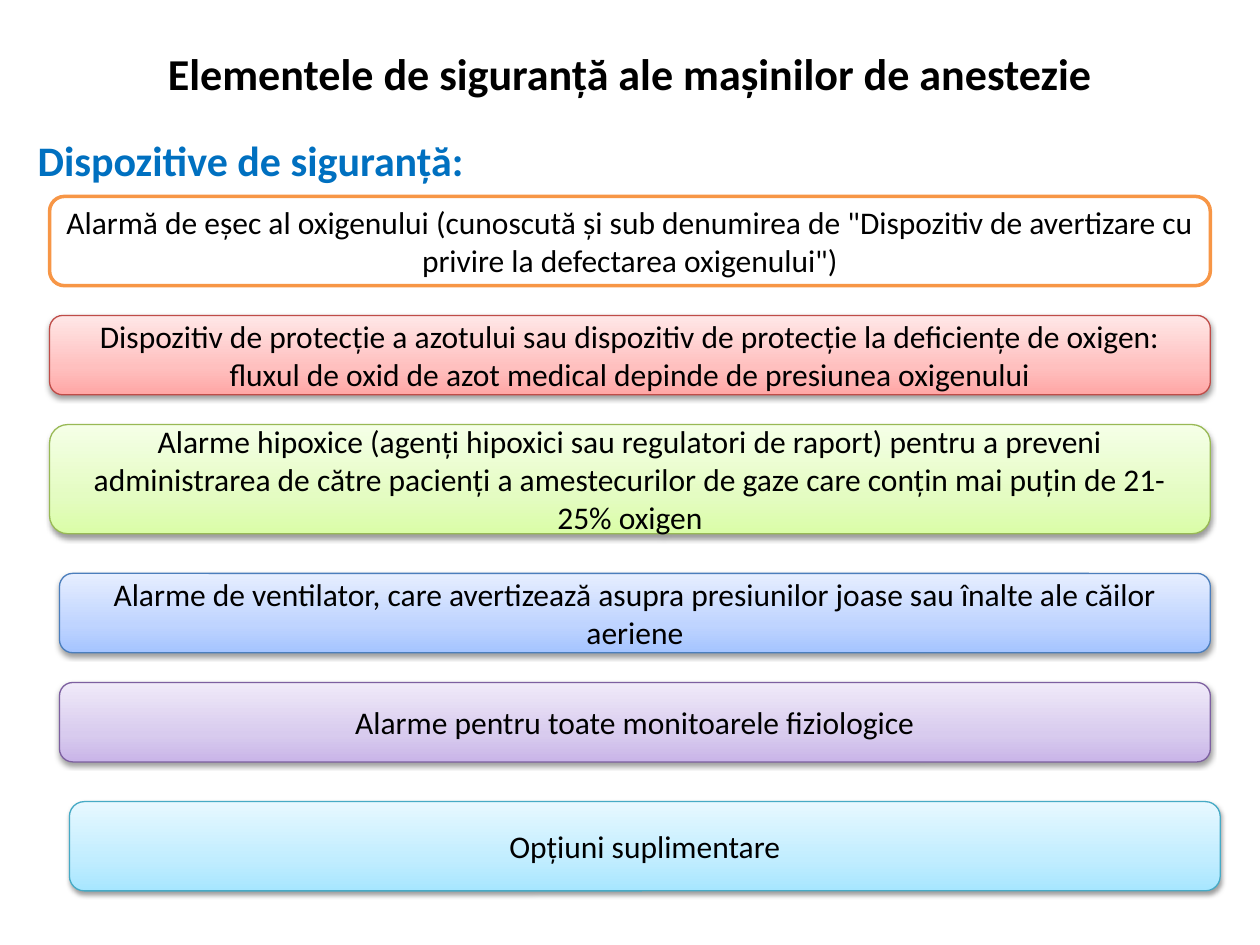
"""Build the slide on safety devices of anaesthesia machines."""
from lxml import etree
from pptx import Presentation
from pptx.dml.color import RGBColor
from pptx.enum.shapes import MSO_SHAPE
from pptx.enum.text import MSO_ANCHOR, PP_ALIGN
from pptx.oxml.ns import qn
from pptx.util import Inches, Pt

ROUNDED = MSO_SHAPE.ROUNDED_RECTANGLE
MIDDLE, TOP = MSO_ANCHOR.MIDDLE, MSO_ANCHOR.TOP
CENTER, LEFT = PP_ALIGN.CENTER, PP_ALIGN.LEFT

TITLE = "Elementele de siguranță ale mașinilor de anestezie"
HEADING = "Dispozitive de siguranță:"
DEVICES = [
    {"text": 'Alarmă de eșec al oxigenului (cunoscută și sub denumirea de "Dispozitiv de '
             'avertizare cu privire la defectarea oxigenului")',
     "look": "plain", "left": 5, "right": 122, "rows": 9, "gap": 3},
    {"text": "Dispozitiv de protecție a azotului sau dispozitiv de protecție la deficiențe "
             "de oxigen: fluxul de oxid de azot medical depinde de presiunea oxigenului",
     "look": "red", "left": 5, "right": 122, "rows": 8, "gap": 3},
    {"text": "Alarme hipoxice (agenți hipoxici sau regulatori de raport) pentru a preveni "
             "administrarea de către pacienți a amestecurilor de gaze care conțin mai puțin "
             "de 21-25% oxigen",
     "look": "green", "left": 5, "right": 122, "rows": 11, "gap": 4},
    {"text": "Alarme de ventilator, care avertizează asupra presiunilor joase sau înalte "
             "ale căilor aeriene",
     "look": "blue", "left": 6, "right": 122, "rows": 8, "gap": 3},
    {"text": "Alarme pentru toate monitoarele fiziologice",
     "look": "purple", "left": 6, "right": 122, "rows": 8, "gap": 4},
    {"text": "Opțiuni suplimentare",
     "look": "aqua", "left": 7, "right": 123, "rows": 9, "gap": 0},
]

THEME = {
    "title": {"name": "Calibri", "size": Pt(25.2), "bold": True, "color": "000000"},
    "heading": {"name": "Calibri", "size": Pt(24), "bold": True, "color": "0070C0"},
    "device": {"name": "Calibri", "size": Pt(18), "bold": False, "color": "000000"},
    "looks": {
        "plain": {"fill": ["FFFFFF"], "line": "F79646", "width": 2},
        "red": {"fill": ["FFA6A5", "FFC0BF", "FFE7E7"], "line": "BF4C48", "width": 0.75},
        "green": {"fill": ["DAFDA7", "E4FCC2", "F5FFE7"], "line": "98B955", "width": 0.75},
        "blue": {"fill": ["A4C4FF", "BFD4FF", "E6EEFF"], "line": "4B7EBC", "width": 0.75},
        "purple": {"fill": ["C9B5E8", "D8CBEE", "F0EAF9"], "line": "7D60A0", "width": 0.75},
        "aqua": {"fill": ["A7E6FF", "C1EDFF", "E7F8FF"], "line": "46AAC5", "width": 0.75},
    },
    "stops": [0, 35, 100],
    "shadow": {"blurRad": Pt(3.1), "dist": Pt(1.6), "dir": 5400000, "rotWithShape": 0},
    "shadow_color": "000000",
    "shadow_alpha": 38,
}

SLIDE_W, SLIDE_H = Inches(10), Inches(7.5)
CELL = SLIDE_W / 127
FIRST_ROW = 19.8


def add_node(parent, tag, **attrs):
    return etree.SubElement(parent, qn(tag), {k: str(v) for k, v in attrs.items()})


def write(sp, text, style, align, anchor):
    tf = sp.text_frame
    for key, value in {"word_wrap": True, "vertical_anchor": anchor}.items():
        setattr(tf, key, value)
    p = tf.paragraphs[0]
    p.alignment = align
    r = p.add_run()
    r.text = text
    for key in ("name", "size", "bold"):
        setattr(r.font, key, style[key])
    r.font.color.rgb = RGBColor.from_string(style["color"])


def add_label(slide, text, style, box, align, anchor):
    left, top, width, height = box
    sp = slide.shapes.add_textbox(int(left * SLIDE_W), int(top * SLIDE_H),
                                  int(width * SLIDE_W), int(height * SLIDE_H))
    write(sp, text, style, align, anchor)


def fill_gradient(sp, colors):
    sp.fill.gradient()
    sp.fill.gradient_angle = 90
    stops = sp.element.spPr.find(qn("a:gradFill")).find(qn("a:gsLst"))
    for stop in list(stops):
        stops.remove(stop)
    for pos, color in zip(THEME["stops"], colors):
        add_node(add_node(stops, "a:gs", pos=pos * 1000), "a:srgbClr", val=color)


def add_shadow(sp):
    effects = sp.element.spPr.find(qn("a:effectLst"))
    shadow = add_node(effects, "a:outerShdw", **THEME["shadow"])
    color = add_node(shadow, "a:srgbClr", val=THEME["shadow_color"])
    add_node(color, "a:alpha", val=THEME["shadow_alpha"] * 1000)


def add_device(slide, device, row):
    look = THEME["looks"][device["look"]]
    width = device["right"] - device["left"]
    box = (device["left"], row, width, device["rows"])
    sp = slide.shapes.add_shape(ROUNDED, *(int(n * CELL) for n in box))
    sp.line.color.rgb = RGBColor.from_string(look["line"])
    sp.line.width = Pt(look["width"])
    sp.shadow.inherit = False
    if len(look["fill"]) > 1:
        fill_gradient(sp, look["fill"])
        add_shadow(sp)
    else:
        sp.fill.solid()
        sp.fill.fore_color.rgb = RGBColor.from_string(look["fill"][0])
    write(sp, device["text"], THEME["device"], CENTER, MIDDLE)


def main():
    prs = Presentation()
    prs.slide_width, prs.slide_height = SLIDE_W, SLIDE_H
    slide = prs.slides.add_slide(prs.slide_layouts[6])
    add_label(slide, TITLE, THEME["title"], (0.05, 0.04, 0.9, 0.075), CENTER, MIDDLE)
    add_label(slide, HEADING, THEME["heading"], (0.02, 0.136, 0.95, 0.07), LEFT, TOP)
    row = FIRST_ROW
    for device in DEVICES:
        add_device(slide, device, row)
        row += device["rows"] + device["gap"]
    prs.save("out.pptx")


if __name__ == "__main__":
    main()
